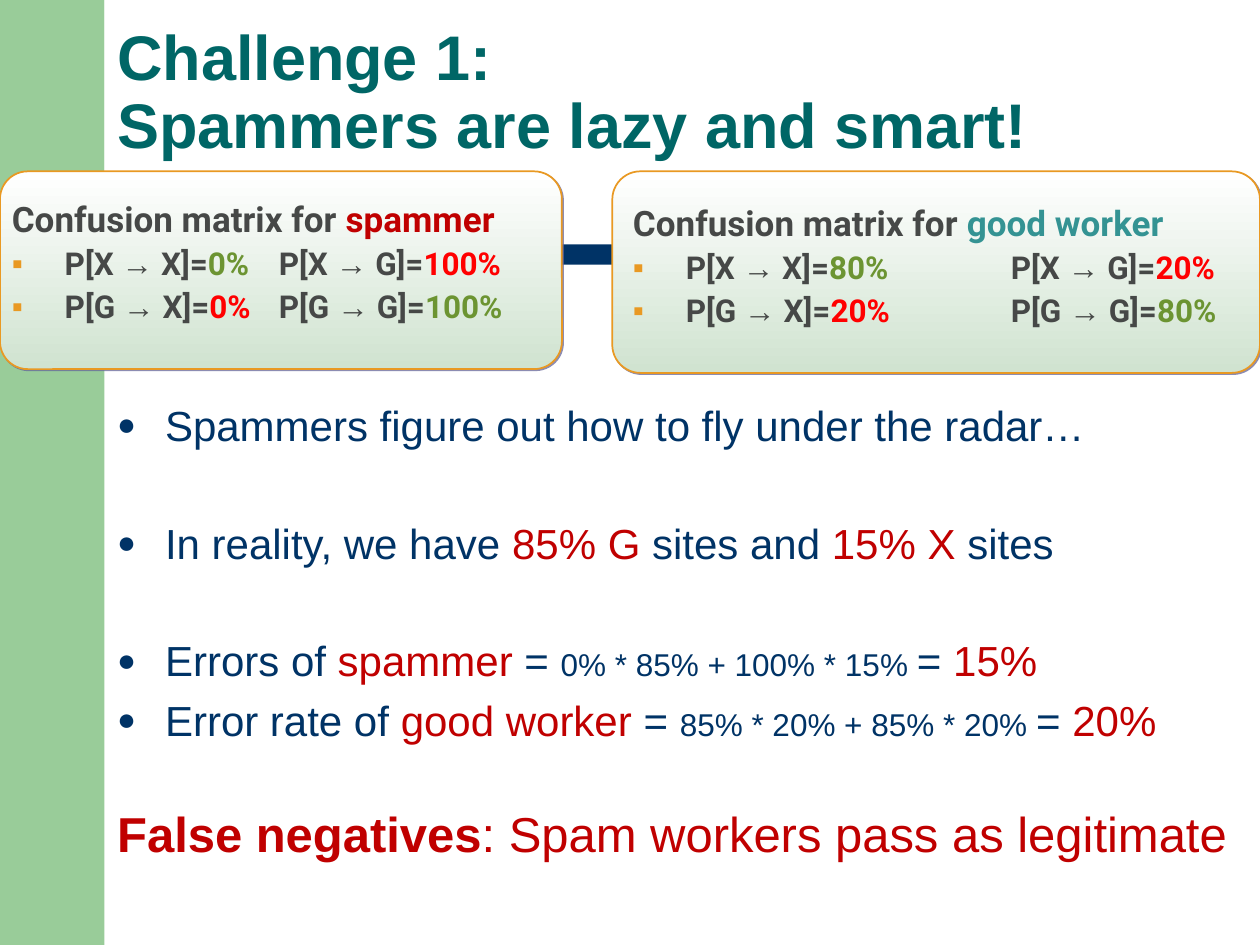
from dataclasses import dataclass

from lxml.etree import SubElement
from pptx import Presentation
from pptx.dml.color import RGBColor
from pptx.enum.shapes import MSO_SHAPE
from pptx.enum.text import MSO_ANCHOR, MSO_AUTO_SIZE, PP_ALIGN
from pptx.oxml.ns import qn
from pptx.util import Inches, Pt

SLIDE_WIDTH, SLIDE_HEIGHT = Inches(10), Inches(7.5)


@dataclass(frozen=True)
class Theme:
    band: str = "99CC99"
    navy: str = "003366"
    teal: str = "006666"
    red: str = "C00000"
    wrong: str = "FF0000"
    right: str = "6C9432"
    worker: str = "349393"
    grey: str = "464847"
    orange: str = "E99923"
    white: str = "FFFFFF"
    card_end: str = "D0E3D0"
    shadow: str = "666699"
    font: str = "Arial"
    card_font: str = "Roboto"
    arrow_font: str = "Times New Roman"
    title: int = 36
    closing: int = 28
    body: int = 24
    card_title: int = 20
    small: int = 18


THEME = Theme()


@dataclass(frozen=True)
class Box:
    """An area in percent of the slide's width and height."""
    left: float
    top: float
    width: float
    height: float

    def lengths(self):
        return (int(SLIDE_WIDTH * self.left / 100), int(SLIDE_HEIGHT * self.top / 100),
                int(SLIDE_WIDTH * self.width / 100), int(SLIDE_HEIGHT * self.height / 100))


def set_values(target, **values):
    for name, value in values.items():
        setattr(target, name, value)


def place(shape, box):
    set_values(shape, **dict(zip(("left", "top", "width", "height"), box.lengths())))


def set_frame(frame, left=0.1, top=0.05, bottom=0.05, anchor=MSO_ANCHOR.TOP):
    set_values(frame, word_wrap=True, auto_size=MSO_AUTO_SIZE.NONE, vertical_anchor=anchor,
               margin_left=Inches(left), margin_right=Inches(0.1),
               margin_top=Inches(top), margin_bottom=Inches(bottom))


def next_para(frame, **values):
    first = len(frame.paragraphs) == 1 and not frame.paragraphs[0].runs
    para = frame.paragraphs[0] if first else frame.add_paragraph()
    set_values(para, alignment=PP_ALIGN.LEFT, **values)
    return para


def add_span(para, text, color, size, font=THEME.font, bold=False):
    span = para.add_run()
    span.text = text
    set_values(span.font, name=font, size=Pt(size), bold=bold)
    span.font.color.rgb = RGBColor.from_string(color)


def set_bullet(para, indent, char=None, color=None, percent=100, tab=None):
    props = para._p.get_or_add_pPr()
    props.set("marL", str(Inches(indent)))
    props.set("indent", str(-Inches(indent)))
    if char:
        SubElement(SubElement(props, qn("a:buClr")), qn("a:srgbClr"), val=color)
        SubElement(props, qn("a:buSzPct"), val=str(percent * 1000))
        SubElement(props, qn("a:buFont"), typeface=THEME.font)
        SubElement(props, qn("a:buChar"), char=char)
    if tab:
        stops = SubElement(props, qn("a:tabLst"))
        SubElement(stops, qn("a:tab"), pos=str(Inches(tab)), algn="l")


def add_backdrop(page, box, color):
    """A plain block behind everything placed before it."""
    block = page.shapes.add_shape(MSO_SHAPE.RECTANGLE, *box.lengths())
    block.shadow.inherit = False
    block.fill.solid()
    block.fill.fore_color.rgb = RGBColor.from_string(color)
    block.line.fill.background()
    page.shapes._spTree.insert(2, block._element)


def fill_title(page, box, lines):
    title = page.shapes.title
    place(title, box)
    title.fill.solid()
    title.fill.fore_color.rgb = RGBColor.from_string(THEME.white)
    set_frame(title.text_frame, bottom=0.65, anchor=MSO_ANCHOR.BOTTOM)
    para = next_para(title.text_frame, line_spacing=0.9)
    for number, line in enumerate(lines):
        if number:
            para.add_line_break()
        add_span(para, line, THEME.teal, THEME.title, bold=True)


def add_card(page, box, inset, subject, subject_color, rows, tab):
    card = page.shapes.add_shape(MSO_SHAPE.ROUNDED_RECTANGLE, *box.lengths())
    card.adjustments[0] = 0.14
    card.fill.gradient()
    card.fill.gradient_angle = 270
    for stop, (position, color) in zip(card.fill.gradient_stops,
                                       ((0, THEME.white), (1, THEME.card_end))):
        stop.position = position
        stop.color.rgb = RGBColor.from_string(color)
    card.line.color.rgb = RGBColor.from_string(THEME.orange)
    card.line.width = Pt(1)
    # Offset shadow
    card.shadow.inherit = False
    effects = card._element.spPr.find(qn("a:effectLst"))
    shadow = SubElement(effects, qn("a:outerShdw"), blurRad="0", dist=str(Pt(1)), dir="2700000")
    tint = SubElement(shadow, qn("a:srgbClr"), val=THEME.shadow)
    SubElement(tint, qn("a:alpha"), val="75000")
    # Heading and matrix rows
    frame = card.text_frame
    set_frame(frame, *inset)
    heading = next_para(frame, space_before=Pt(3))
    for text, color in (("Confusion matrix for ", THEME.grey), (subject, subject_color)):
        add_span(heading, text, color, THEME.card_title, THEME.card_font, True)
    for actual, shares in zip("XG", rows):
        para = next_para(frame, space_before=Pt(3))
        set_bullet(para, 0.42, "▪", THEME.orange, tab=tab)
        for answer, share in zip("XG", shares):
            lead = "" if answer == "X" else "\t"
            value_color = THEME.right if actual == answer else THEME.wrong
            for text, color, font in ((f"{lead}P[{actual}", THEME.grey, THEME.card_font),
                                      (" → ", THEME.grey, THEME.arrow_font),
                                      (f"{answer}]=", THEME.grey, THEME.card_font),
                                      (share, value_color, THEME.card_font)):
                add_span(para, text, color, THEME.small, font, True)


def fill_body(page, box, points, closing):
    body = page.placeholders[1]
    place(body, box)
    frame = body.text_frame
    set_frame(frame)
    for space, spans in points:
        para = next_para(frame, space_before=Pt(space))
        set_bullet(para, 0.38, "●", THEME.navy, 75)
        for text, color, size in spans:
            add_span(para, text, color, size)
    # Closing line without a bullet
    para = next_para(frame, space_before=Pt(34))
    set_bullet(para, 0.38)
    SubElement(para._p.get_or_add_pPr(), qn("a:buNone"))
    for text, bold in closing:
        add_span(para, text, THEME.red, THEME.closing, bold=bold)


def plain(text):
    return text, THEME.navy, THEME.body


def strong(text):
    return text, THEME.red, THEME.body


def sum_of(text):
    return text, THEME.navy, THEME.small


def main():
    deck = Presentation()
    set_values(deck, slide_width=SLIDE_WIDTH, slide_height=SLIDE_HEIGHT)
    page = deck.slides.add_slide(deck.slide_layouts[1])

    fill_title(page, Box(8.3, 0, 91.7, 25.87), ("Challenge 1: ", "Spammers are lazy and smart!"))
    near, wide = 5, 38.5
    fill_body(page, Box(8.3, 41.6, 91.7, 58.4), (
        (2.5, [plain("Spammers figure out how to fly under the radar…")]),
        (wide, [plain("In reality, we have "), strong("85% G"), plain(" sites and "),
                strong("15% X "), plain("sites")]),
        (wide, [plain("Errors of "), strong("spammer"), plain(" = "),
                sum_of("0% * 85% + 100% * 15% "), plain("= "), strong("15%")]),
        (near, [plain("Error rate of "), strong("good worker "), plain("= "),
                sum_of("85% * 20% + 85% * 20% "), plain("= "), strong("20%")]),
    ), (("False negatives", True), (": Spam workers pass as legitimate", False)))

    # Bar and side band behind the text
    add_backdrop(page, Box(6.7, 23.33, 76.7, 4.67), THEME.navy)
    add_backdrop(page, Box(0, 0, 8.3, 100), THEME.band)

    add_card(page, Box(0, 18.13, 44.6, 20.93), (0.03, 0.14), "spammer", THEME.red,
             (("0%", "100%"), ("0%", "100%")), 2.12)
    add_card(page, Box(48.6, 18.13, 51.4, 21.33), (0.1, 0.17), "good worker", THEME.worker,
             (("80%", "20%"), ("20%", "80%")), 3)
    deck.save("out.pptx")


if __name__ == "__main__":
    main()
